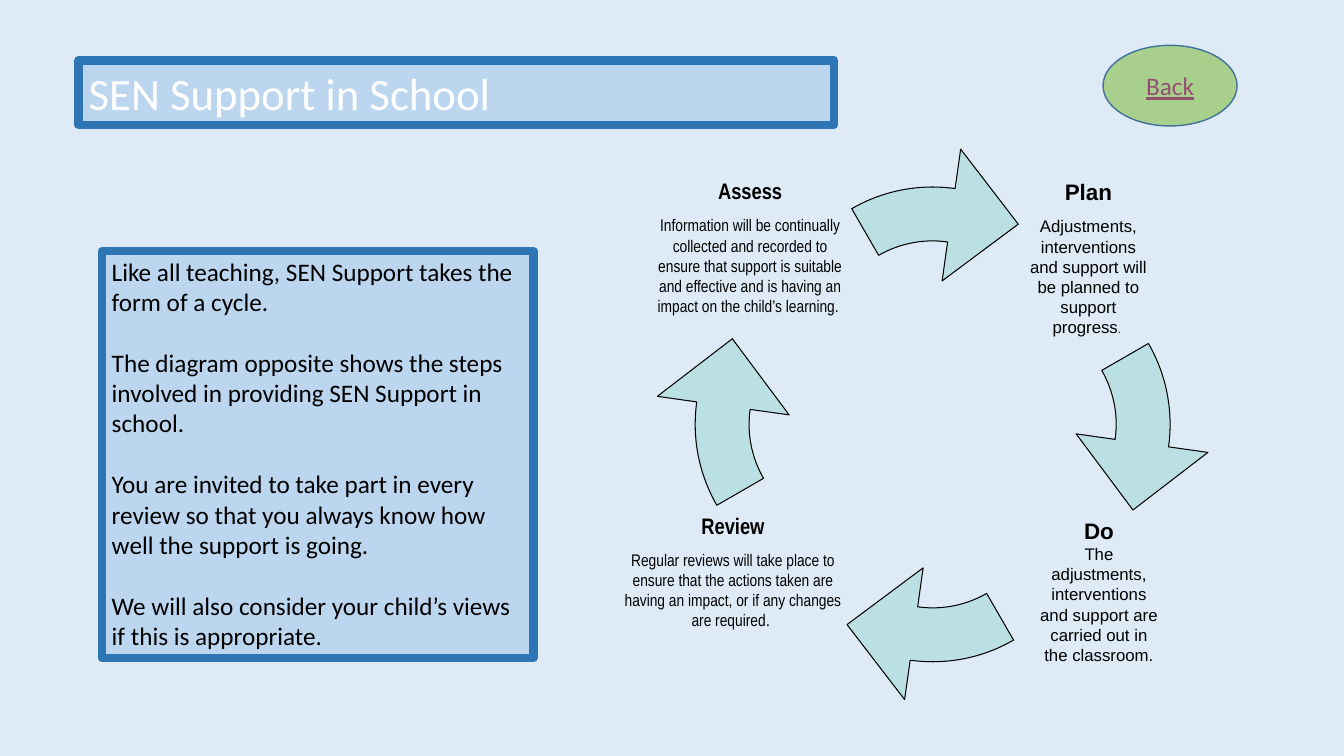
from math import cos, radians, sin, tan

from lxml import etree
from pptx import Presentation
from pptx.dml.color import RGBColor
from pptx.enum.shapes import MSO_SHAPE
from pptx.enum.text import MSO_ANCHOR, PP_ALIGN
from pptx.oxml.ns import qn
from pptx.util import Inches, Pt

RECT, OVAL = MSO_SHAPE.RECTANGLE, MSO_SHAPE.OVAL
TOP, MIDDLE = MSO_ANCHOR.TOP, MSO_ANCHOR.MIDDLE
LEFT, CENTER = PP_ALIGN.LEFT, PP_ALIGN.CENTER

PANEL, PANEL_LINE = "BBD6EE", "2E75B5"
BLACK = "000000"

CYCLE_CENTER = (9.25, 4.21)
ARROW_OFFSET = 0.75
ARROW_FRAME = 3.21
OUTER, INNER = ARROW_FRAME / 2, 1.07

INTRO = [
    "Like all teaching, SEN Support takes the form of a cycle.",
    "The diagram opposite shows the steps involved in providing SEN Support in school.",
    "You are invited to take part in every review so that you always know how "
    "well the support is going.",
    "We will also consider your child’s views if this is appropriate.",
]

# Heading, font, box, anchor, inset, gap under heading, body runs (text, size, font)
STAGES = [
    ("Plan", "Arial", (10.19, 1.95, 1.21, 1.21), MIDDLE, 0, 8, [
        ("Adjustments, interventions and support will be planned to support progress",
         12, "Arial"),
        (". ", 8, "Arial")]),
    ("Review", "Arial Narrow", (6.14, 5.06, 2.26, 1.21), MIDDLE, 0, 8, [
        ("Regular reviews will take place to ensure that the actions taken are having "
         "an impact, or if any changes are required", 12, "Arial Narrow"),
        (". ", 12, "Roboto")]),
    ("Assess", "Arial Narrow", (6.48, 1.84, 1.92, 1.21), MIDDLE, 0, 8, [
        ("Information will be continually collected and recorded to ensure that support "
         "is suitable and effective and is having an impact on the child’s learning. ",
         12, "Arial Narrow")]),
    ("Do", "Arial", (10.21, 5.08, 1.38, 1.58), TOP, 0.1, 0, [
        ("The adjustments, interventions and support are carried out in the classroom.",
         12, "Arial")]),
]


def rgb(color):
    return RGBColor.from_string(color)


def style(sp, fill, line, width):
    sp.shadow.inherit = False
    sp.fill.solid()
    sp.fill.fore_color.rgb = rgb(fill)
    sp.line.color.rgb = rgb(line)
    sp.line.width = Pt(width)


def setup_text(sp, anchor, inset=0.1):
    tf = sp.text_frame
    tf.word_wrap = True
    tf.vertical_anchor = anchor
    tf.margin_left = tf.margin_right = Inches(inset)
    tf.margin_top = tf.margin_bottom = Inches(inset / 2)
    return tf


def add_run(p, text, size, font="Calibri", color=BLACK, bold=False, underline=False):
    r = p.add_run()
    r.text = text
    r.font.size = Pt(size)
    r.font.name = font
    r.font.color.rgb = rgb(color)
    r.font.bold = bold
    r.font.underline = underline


def add_box(s, kind, box, fill, line, width, anchor=TOP):
    sp = s.shapes.add_shape(kind, *map(Inches, box))
    style(sp, fill, line, width)
    return setup_text(sp, anchor)


def add_intro(s):
    tf = add_box(s, RECT, (1.01, 2.49, 4.28, 4.04), PANEL, PANEL_LINE, 6)
    for i, text in enumerate(INTRO):
        p = tf.add_paragraph() if i else tf.paragraphs[0]
        p.alignment = LEFT
        p.space_before = Pt(22 if i else 0)
        add_run(p, text, 18)


def add_stage(s, heading, font, box, anchor, inset, gap, body):
    tf = setup_text(s.shapes.add_textbox(*map(Inches, box)), anchor, inset)
    p = tf.paragraphs[0]
    p.alignment = CENTER
    add_run(p, heading, 16, font, bold=True)
    p = tf.add_paragraph()
    p.alignment = CENTER
    p.space_before = Pt(gap)
    for text, size, run_font in body:
        add_run(p, text, size, run_font)


def polar(radius, angle):
    """Point in the arrow frame, measured from the frame's centre."""
    a = radians(angle)
    return OUTER + radius * cos(a), OUTER + radius * sin(a)


def curve(radius, start, end):
    """Cubic Bezier command that follows a circle between two angles."""
    k = radius * 4 / 3 * tan(radians(end - start) / 4)
    (x1, y1), (x2, y2) = polar(radius, start), polar(radius, end)
    a, b = radians(start), radians(end)
    return "cubicBezTo", [(x1 - k * sin(a), y1 + k * cos(a)),
                          (x2 + k * sin(b), y2 - k * cos(b)), (x2, y2)]


def line_to(radius, angle):
    return "lnTo", [polar(radius, angle)]


def add_cycle_arrow(s, turn):
    """Curved arrow of the cycle; turn 0 is the top one, in degrees clockwise."""
    commands = [
        ("moveTo", [polar(INNER, -82)]),
        curve(INNER, -82, -90), curve(INNER, -90, -120),
        line_to(OUTER, -120),
        curve(OUTER, -120, -90), curve(OUTER, -90, -82),
        line_to(2, -82), line_to(1.5, -55.5), line_to(0.68, -82), line_to(INNER, -82),
        ("close", []),
    ]
    side = Inches(ARROW_FRAME)
    builder = s.shapes.build_freeform(0, 0)
    builder.add_line_segments([(side, 0), (side, side)])
    sp = builder.convert_to_shape()
    outline = next(sp.element.iter(qn("a:path")))
    outline.clear()
    outline.set("w", str(side))
    outline.set("h", str(side))
    for name, points in commands:
        command = etree.SubElement(outline, qn("a:" + name))
        for x, y in points:
            etree.SubElement(command, qn("a:pt"), x=str(Inches(x)), y=str(Inches(y)))
    sp.left = Inches(CYCLE_CENTER[0] + ARROW_OFFSET * sin(radians(turn)) - OUTER)
    sp.top = Inches(CYCLE_CENTER[1] - ARROW_OFFSET * cos(radians(turn)) - OUTER)
    sp.width = sp.height = side
    sp.rotation = turn
    style(sp, "BBE0E3", BLACK, 0.75)


def main():
    prs = Presentation()
    prs.slide_width, prs.slide_height = Inches(13.33), Inches(7.5)
    s = prs.slides.add_slide(prs.slide_layouts[6])
    s.background.fill.solid()
    s.background.fill.fore_color.rgb = rgb("DEEBF7")

    p = add_box(s, RECT, (0.78, 0.6, 7.49, 0.64), PANEL, PANEL_LINE, 6).paragraphs[0]
    p.alignment = LEFT
    add_run(p, "SEN Support in School", 32, color="FFFFFF")

    p = add_box(s, OVAL, (10.94, 0.45, 1.33, 0.8), "A8D08C", "42719B", 1, MIDDLE).paragraphs[0]
    p.alignment = CENTER
    add_run(p, "Back", 18, color="954F72", underline=True)

    add_intro(s)
    for turn in range(0, 360, 90):
        add_cycle_arrow(s, turn)
    for stage in STAGES:
        add_stage(s, *stage)
    prs.save("out.pptx")


if __name__ == "__main__":
    main()
